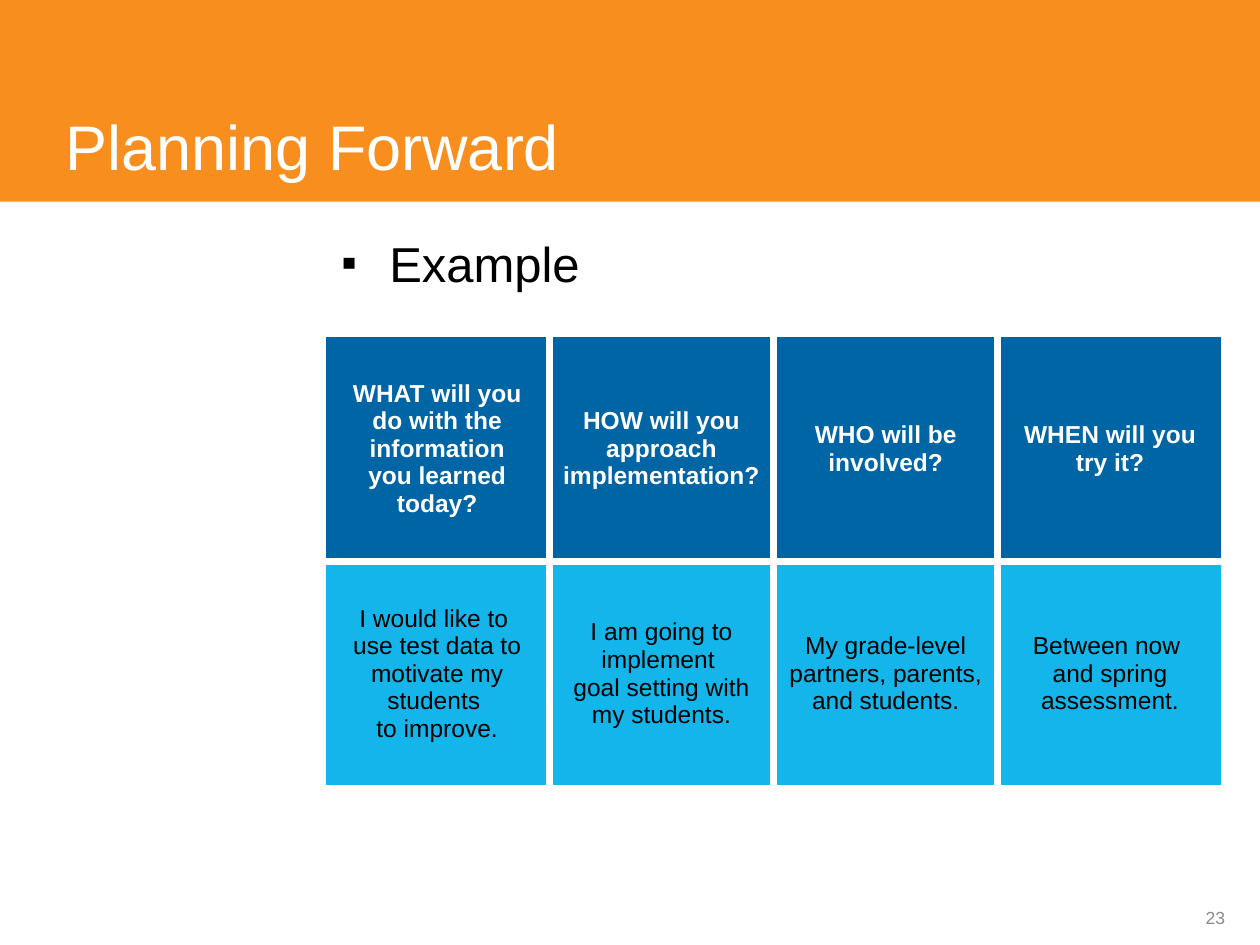
"""Build the "Planning Forward" slide with an example action-plan table."""
from dataclasses import dataclass

from lxml.etree import SubElement
from pptx import Presentation
from pptx.dml.color import RGBColor
from pptx.enum.shapes import MSO_SHAPE
from pptx.enum.text import MSO_ANCHOR, MSO_AUTO_SIZE, PP_ALIGN
from pptx.oxml import parse_xml
from pptx.oxml.ns import nsdecls, qn
from pptx.util import Inches, Pt

FONT = "Arial"
WHITE, BLACK, GREY = "FFFFFF", "000000", "8C8C8C"
ORANGE, DARK_BLUE, LIGHT_BLUE = "F78E1E", "0065A4", "13B5EA"
OUTER_EDGE, INNER_EDGE = 1, 4.5


@dataclass
class PlanStep:
    question: str
    answer: str


@dataclass
class RowStyle:
    fill: str
    color: str
    bold: bool


STEPS = [
    PlanStep("WHAT will you do with the information\nyou learned today?",
             "I would like to \vuse test data to motivate my students \vto improve."),
    PlanStep("HOW will you approach implementation?",
             "I am going to implement \vgoal setting with my students."),
    PlanStep("WHO will be involved?",
             "My grade-level partners, parents, and students."),
    PlanStep("WHEN will you try it?",
             "Between now \vand spring assessment."),
]
ROW_STYLES = [RowStyle(DARK_BLUE, WHITE, True), RowStyle(LIGHT_BLUE, BLACK, False)]


def rgb(color: str) -> RGBColor:
    return RGBColor.from_string(color)


def place(shape, left: float, top: float, width: float, height: float) -> None:
    shape.left, shape.top = Inches(left), Inches(top)
    shape.width, shape.height = Inches(width), Inches(height)


def style_paragraph(paragraph, size: float, color: str, align=PP_ALIGN.LEFT,
                    bold: bool = False) -> None:
    paragraph.alignment = align
    font = paragraph.font
    font.name, font.size, font.bold = FONT, Pt(size), bold
    font.color.rgb = rgb(color)


def add_band(slide) -> None:
    band = slide.shapes.add_shape(MSO_SHAPE.RECTANGLE, 0, 0, Inches(10), Inches(1.6))
    band.shadow.inherit = False
    band.fill.solid()
    band.fill.fore_color.rgb = rgb(ORANGE)
    band.line.fill.background()
    slide.shapes._spTree.insert(2, band._element)


def fill_title(slide) -> None:
    title = slide.shapes.title
    place(title, 0.42, 0.29, 9.33, 1.21)
    frame = title.text_frame
    frame.text = "Planning Forward"
    frame.auto_size = MSO_AUTO_SIZE.NONE
    frame.vertical_anchor = MSO_ANCHOR.BOTTOM
    style_paragraph(frame.paragraphs[0], 36, WHITE)


def fill_body(slide) -> None:
    body = slide.placeholders[1]
    place(body, 2.61, 1.8, 7.13, 5.3)
    frame = body.text_frame
    frame.text = "Example"
    frame.auto_size = MSO_AUTO_SIZE.NONE
    example = frame.paragraphs[0]
    example.space_before, example.space_after = Pt(0), Pt(6)
    properties = example._p.get_or_add_pPr()
    properties.set("marL", str(Inches(0.38)))
    properties.set("indent", str(-Inches(0.38)))
    SubElement(properties, qn("a:buSzPct"), val="90000")
    SubElement(properties, qn("a:buFont"), typeface=FONT)
    SubElement(properties, qn("a:buChar"), char="▪")
    style_paragraph(example, 28, BLACK)


def set_borders(cell, widths: dict[str, float]) -> None:
    properties = cell._tc.get_or_add_tcPr()
    for position, (side, width) in enumerate(widths.items()):
        properties.insert(position, parse_xml(
            f'<a:ln{side} {nsdecls("a")} w="{Pt(width)}"><a:solidFill>'
            f'<a:srgbClr val="{WHITE}"/></a:solidFill></a:ln{side}>'))


def fill_cell(cell, text: str, style: RowStyle) -> None:
    cell.text = text
    cell.vertical_anchor = MSO_ANCHOR.MIDDLE
    cell.margin_left = cell.margin_right = Inches(0.09)
    cell.margin_top = cell.margin_bottom = Inches(0.04)
    cell.fill.solid()
    cell.fill.fore_color.rgb = rgb(style.fill)
    for paragraph in cell.text_frame.paragraphs:
        style_paragraph(paragraph, 14, style.color, PP_ALIGN.CENTER, style.bold)


def add_plan_table(slide) -> None:
    last_row, last_column = len(ROW_STYLES) - 1, len(STEPS) - 1
    plan = slide.shapes.add_table(
        len(ROW_STYLES), len(STEPS),
        Inches(2.58), Inches(2.67), Inches(7.12), Inches(3.57)).table
    for column, step in enumerate(STEPS):
        for row, text in enumerate((step.question, step.answer)):
            cell = plan.cell(row, column)
            fill_cell(cell, text, ROW_STYLES[row])
            set_borders(cell, {
                "L": OUTER_EDGE if column == 0 else INNER_EDGE,
                "R": OUTER_EDGE if column == last_column else INNER_EDGE,
                "T": OUTER_EDGE if row == 0 else INNER_EDGE,
                "B": OUTER_EDGE if row == last_row else INNER_EDGE,
            })


def add_page_number(slide) -> None:
    page_number = slide.shapes.add_textbox(
        Inches(7.4), Inches(7.08), Inches(2.42), Inches(0.4))
    frame = page_number.text_frame
    frame.word_wrap = True
    frame.vertical_anchor = MSO_ANCHOR.MIDDLE
    frame.text = "23"
    style_paragraph(frame.paragraphs[0], 10, GREY, PP_ALIGN.RIGHT)


def main() -> None:
    deck = Presentation()
    deck.slide_width, deck.slide_height = Inches(10), Inches(7.5)
    slide = deck.slides.add_slide(deck.slide_layouts[1])
    add_band(slide)
    fill_title(slide)
    fill_body(slide)
    add_plan_table(slide)
    add_page_number(slide)
    deck.save("out.pptx")


if __name__ == "__main__":
    main()
